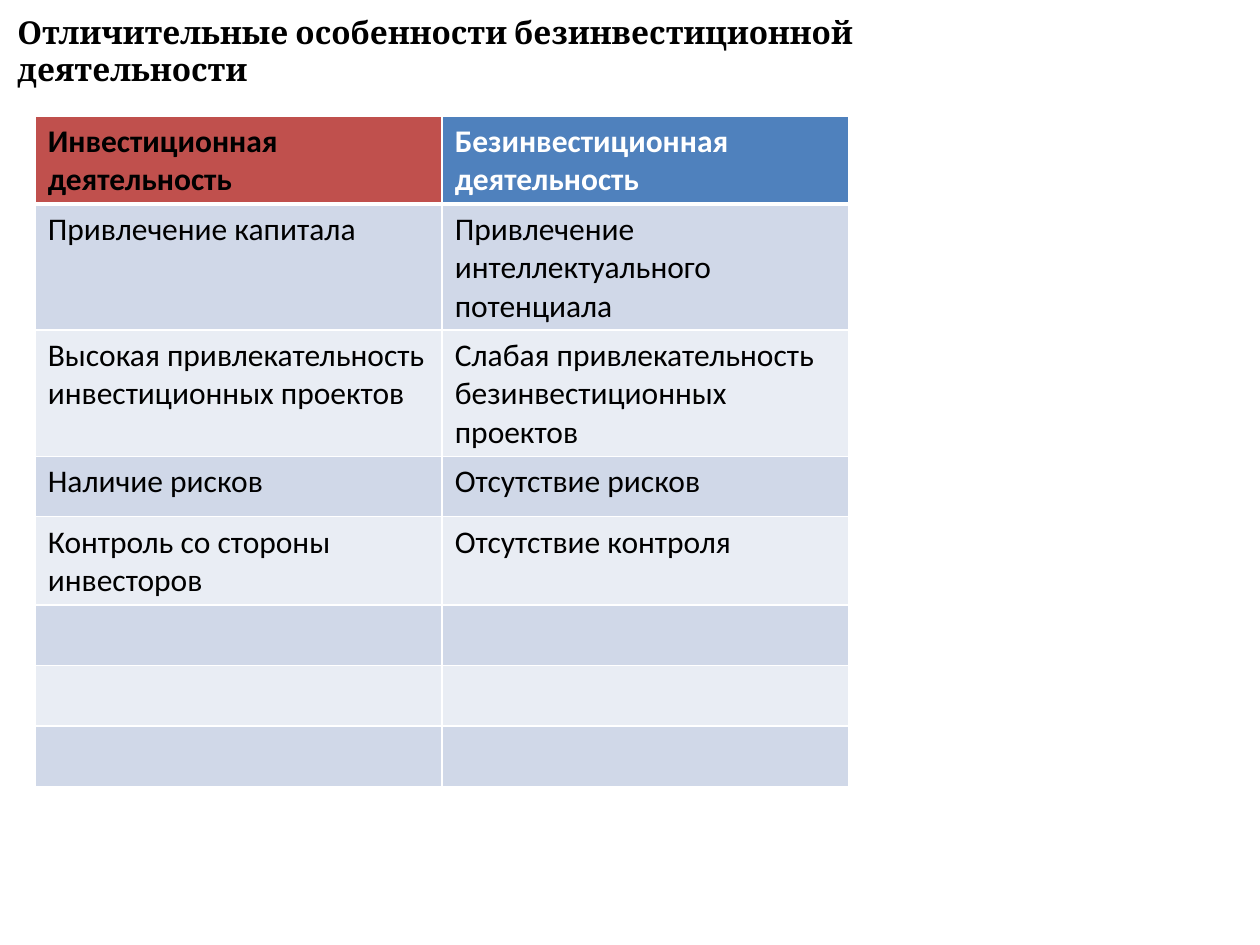
from lxml.etree import SubElement
from pptx import Presentation
from pptx.dml.color import RGBColor as Rgb
from pptx.enum.text import MSO_AUTO_SIZE as AutoSize
from pptx.oxml.ns import qn
from pptx.util import Inches, Pt

COLORS = {
    "text": "000000",
    "light": "FFFFFF",
    "investment": "C0504D",
    "no_investment": "4F81BD",
    "odd_row": "D0D8E8",
    "even_row": "E9EDF4",
}
TITLE = ["Отличительные особенности безинвестиционной", "деятельности"]
HEADINGS = [
    ("Инвестиционная деятельность", "investment", "text"),
    ("Безинвестиционная деятельность", "no_investment", "light"),
]
COMPARISONS = [
    ("Привлечение капитала", "Привлечение интеллектуального потенциала"),
    ("Высокая привлекательность инвестиционных проектов",
     "Слабая привлекательность безинвестиционных проектов"),
    ("Наличие рисков", "Отсутствие рисков"),
    ("Контроль со стороны инвесторов", "Отсутствие контроля"),
] + [("", "")] * 3


class SlideBuilder:
    """Hold the text style and the current slide, and add elements to it."""

    def __init__(self, slide, size=18):
        self.slide = slide
        self.size = Pt(size)

    def add_text(self, paragraph, text, color, **font_values):
        run = paragraph.add_run()
        run.text = text
        for attribute, value in {"size": self.size, **font_values}.items():
            setattr(run.font, attribute, value)
        run.font.color.rgb = Rgb.from_string(COLORS[color])

    def title(self, lines, left, top, width, height):
        frame = self.slide.shapes.add_textbox(
            Inches(left), Inches(top), Inches(width), Inches(height)).text_frame
        frame.word_wrap = True
        frame.auto_size = AutoSize.SHAPE_TO_FIT_TEXT
        for index, line in enumerate(lines):
            paragraph = frame.add_paragraph() if index else frame.paragraphs[0]
            self.add_text(paragraph, line, "text", name="Cambria", bold=True)

    def borders(self, cell, **widths):
        properties = cell._tc.get_or_add_tcPr()
        for side in "LRTB":
            line = SubElement(properties, qn(f"a:ln{side}"), w=str(Pt(widths.get(side, 1))))
            fill = SubElement(line, qn("a:solidFill"))
            SubElement(fill, qn("a:srgbClr"), val=COLORS["light"])

    def cell(self, cell, text, fill, color="text", bold=False, **widths):
        self.borders(cell, **widths)
        cell.fill.solid()
        cell.fill.fore_color.rgb = Rgb.from_string(COLORS[fill])
        if text:
            self.add_text(cell.text_frame.paragraphs[0], text, color, name="Calibri", bold=bold)

    def table(self, headings, rows, left, top, column_width, row_height):
        row_count, column_count = len(rows) + 1, len(headings)
        table = self.slide.shapes.add_table(
            row_count, column_count, Inches(left), Inches(top),
            Inches(column_width * column_count), Inches(row_height * row_count)).table
        for column in table.columns:
            column.width = Inches(column_width)
        for row in table.rows:
            row.height = Inches(row_height)
        for column, (text, fill, color) in enumerate(headings):
            self.cell(table.cell(0, column), text, fill, color, bold=True, B=3)
        for number, row in enumerate(rows, 1):
            fill = "odd_row" if number % 2 else "even_row"
            for column, text in enumerate(row):
                self.cell(table.cell(number, column), text, fill, T=3 if number == 1 else 1)


def main():
    presentation = Presentation()
    presentation.slide_width = Inches(10)
    presentation.slide_height = Inches(7.5)
    builder = SlideBuilder(presentation.slides.add_slide(presentation.slide_layouts[6]))
    builder.title(TITLE, 0.04, 0.05, 7.46, 0.71)
    builder.table(HEADINGS, COMPARISONS, 0.28, 0.92, 3.23, 0.48)
    presentation.save("out.pptx")


if __name__ == "__main__":
    main()
